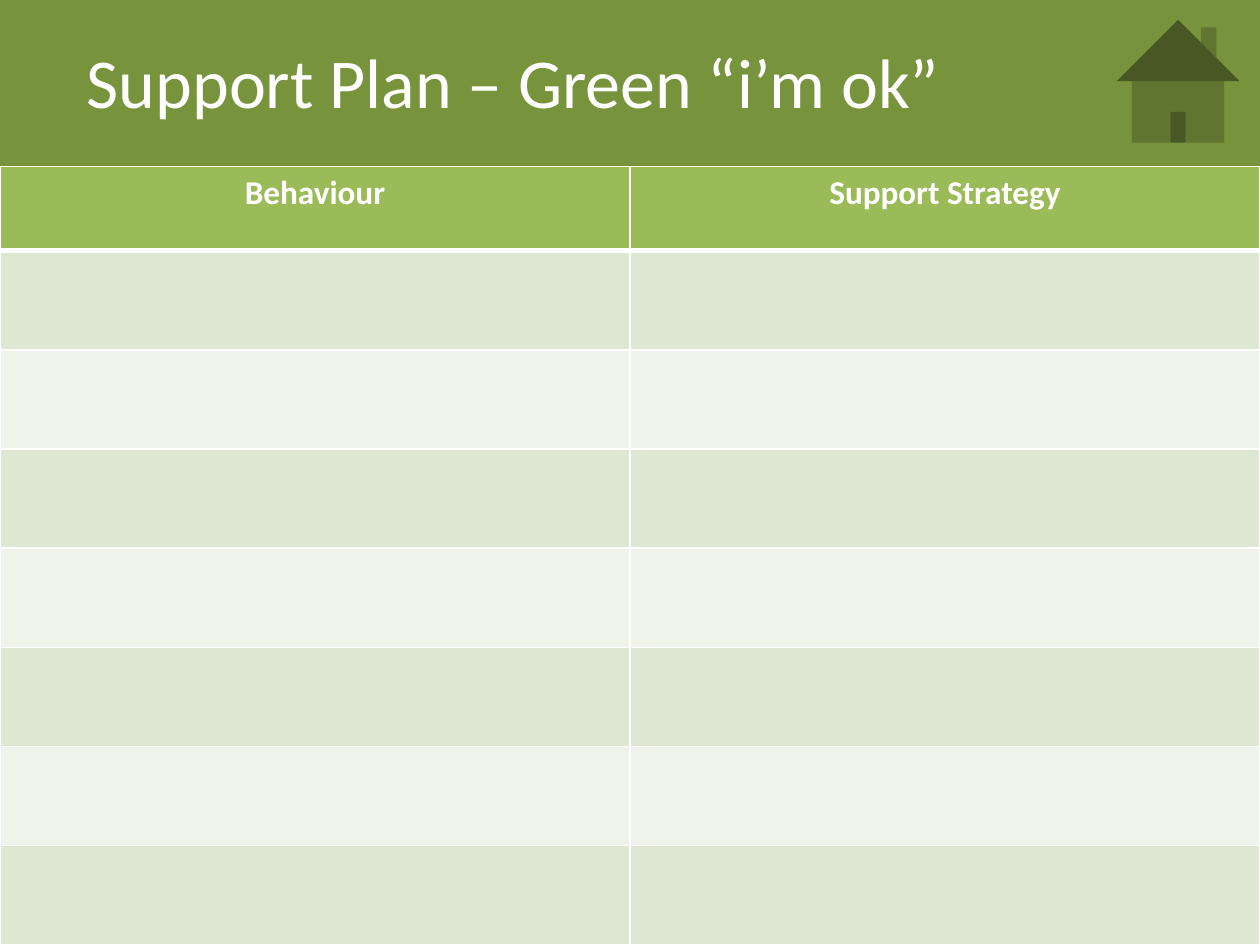
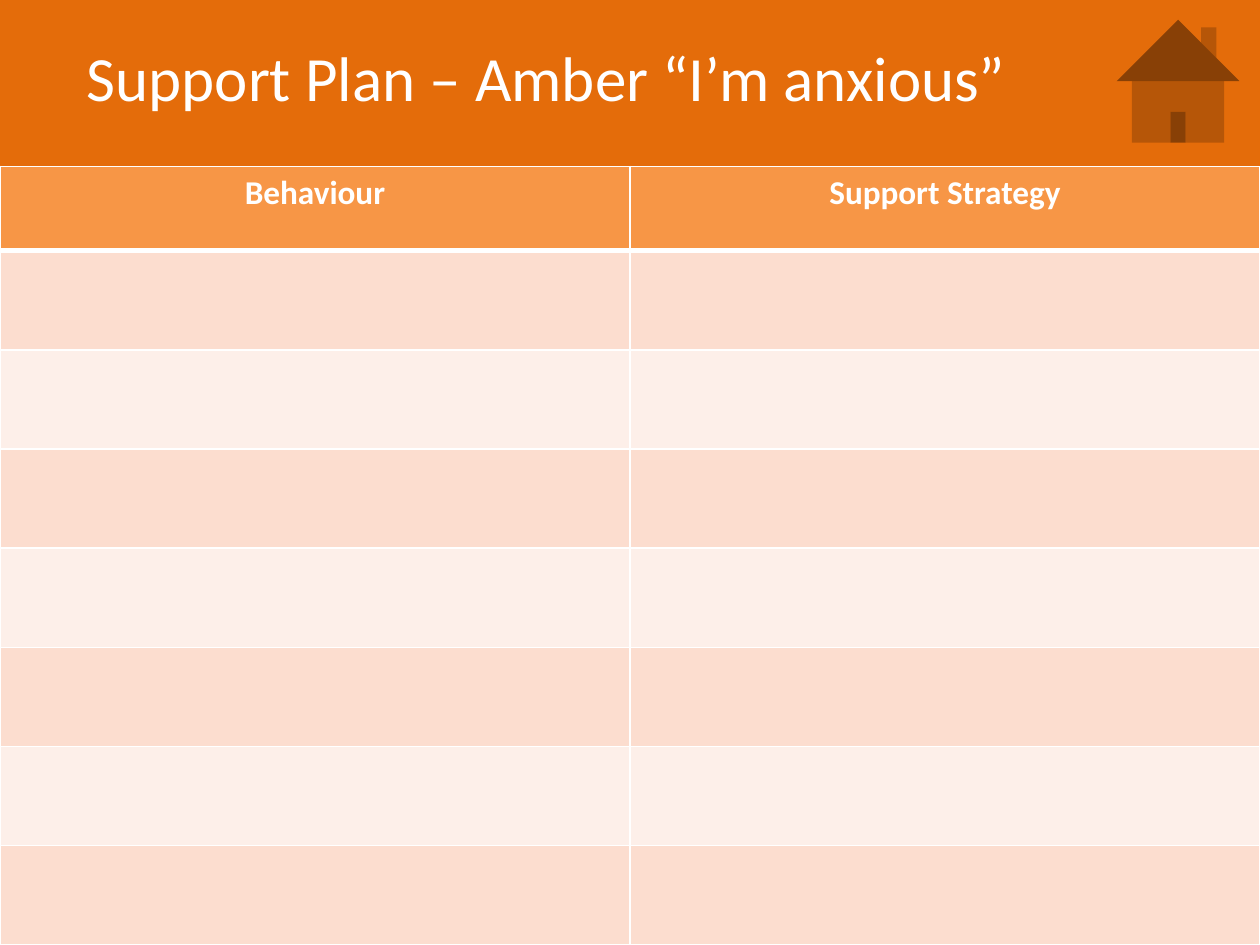
from pptx import Presentation
from pptx.dml.color import RGBColor
from pptx.enum.shapes import MSO_SHAPE
from pptx.enum.text import MSO_AUTO_SIZE, PP_ALIGN
from pptx.oxml import parse_xml
from pptx.oxml.ns import nsdecls
from pptx.util import Inches, Pt

FONT = "Calibri"
WHITE = "FFFFFF"
HEADINGS = ["Behaviour", "Support Strategy"]
BODY_ROWS = 7
PLANS = [
    ("Support Plan – Green “i’m ok”", 40, 0.77, "77933C", "9BBB59", ["DEE7D1", "EFF3EA"]),
    ("Support Plan – Amber “I’m anxious”", 36, 0.71, "E46C0A", "F79646", ["FCDDCF", "FDEFE9"]),
]


def paint(format_part, color):
    format_part.solid()
    format_part.fore_color.rgb = RGBColor.from_string(color)


def add_borders(cell, **points):
    properties = cell._tc.get_or_add_tcPr()
    for side in "LRTB":
        properties.append(parse_xml(
            f'<a:ln{side} {nsdecls("a")} w="{Pt(points.get(side, 1))}"><a:solidFill>'
            f'<a:srgbClr val="{WHITE}"/></a:solidFill></a:ln{side}>'))


deck = Presentation()
deck.slide_width, deck.slide_height = Inches(10), Inches(7.5)
width, height = deck.slide_width, deck.slide_height
band_height = Inches(1.33)
table_top = Inches(1.32)
header_height = Inches(0.67)
row_height = (height - table_top - header_height) // BODY_ROWS
button_width = Inches(1.3)

for title, size, title_height, band_color, header_color, stripes in PLANS:
    page = deck.slides.add_slide(deck.slide_layouts[6])

    band = page.shapes.add_shape(MSO_SHAPE.RECTANGLE, 0, 0, Inches(10.02), band_height)

    box = page.shapes.add_textbox(Inches(0.59), Inches(0.26), Inches(8.94), Inches(title_height))
    box.text_frame.word_wrap = True
    box.text_frame.auto_size = MSO_AUTO_SIZE.SHAPE_TO_FIT_TEXT
    para = box.text_frame.paragraphs[0]
    para.text = title
    para.font.name, para.font.size = FONT, Pt(size)
    para.font.color.rgb = RGBColor.from_string(WHITE)

    table = page.shapes.add_table(
        BODY_ROWS + 1, len(HEADINGS), 0, table_top, width, height - table_top).table
    for row_number, row in enumerate(table.rows):
        row.height = row_height if row_number else header_height
        for heading, cell in zip(HEADINGS, row.cells):
            if row_number == 0:
                add_borders(cell, B=3)
                paint(cell.fill, header_color)
                para = cell.text_frame.paragraphs[0]
                para.text = heading
                para.alignment = PP_ALIGN.CENTER
                para.font.name, para.font.size, para.font.bold = FONT, Pt(19), True
                para.font.color.rgb = RGBColor.from_string(WHITE)
            else:
                add_borders(cell, T=3 if row_number == 1 else 1)
                paint(cell.fill, stripes[(row_number - 1) % 2])

    home_button = page.shapes.add_shape(
        MSO_SHAPE.ACTION_BUTTON_HOME, width - button_width, Inches(-0.02), button_width, band_height)

    for shape in (band, home_button):
        paint(shape.fill, band_color)
        shape.line.fill.background()
        shape.shadow.inherit = False

deck.save("out.pptx")
